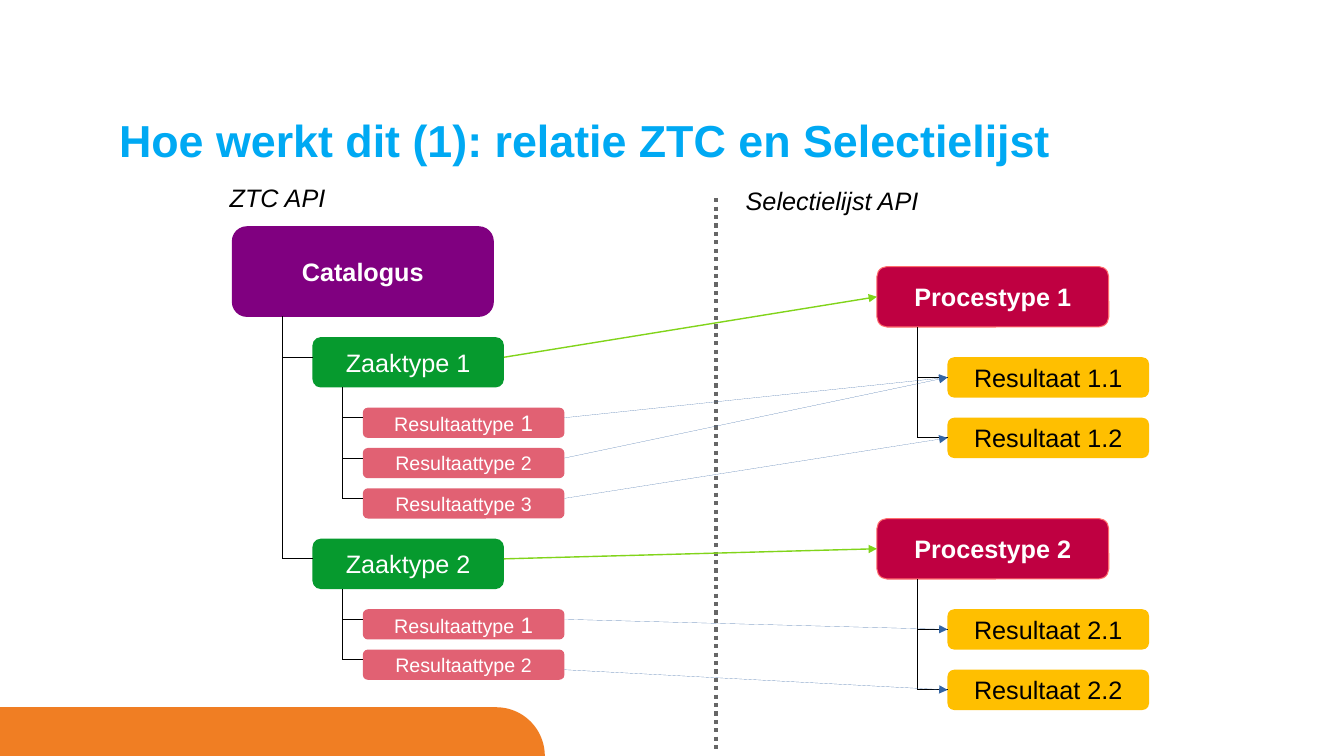
from math import cos, pi, sin

from pptx import Presentation
from pptx.dml.color import RGBColor
from pptx.enum.dml import MSO_LINE
from pptx.enum.shapes import MSO_CONNECTOR, MSO_SHAPE
from pptx.enum.text import MSO_ANCHOR as ANCHOR, MSO_AUTO_SIZE as AUTO, PP_ALIGN as ALIGN
from pptx.oxml.ns import qn
from pptx.util import Pt
from lxml.etree import SubElement

# Content
TITLE = "Hoe werkt dit (1): relatie ZTC en Selectielijst"
CAPTIONS = [  # text, left, top, width
    ("ZTC API", 157, 126.7, 95),
    ("Selectielijst API", 525.6, 128.9, 230.4),
]
CATALOGUS = "Catalogus"
ZAAKTYPES = [
    ("Zaaktype 1", ["Resultaattype 1", "Resultaattype 2", "Resultaattype 3"]),
    ("Zaaktype 2", ["Resultaattype 1", "Resultaattype 2"]),
]
PROCESTYPES = [
    ("Procestype 1", ["Resultaat 1.1", "Resultaat 1.2"]),
    ("Procestype 2", ["Resultaat 2.1", "Resultaat 2.2"]),
]
# (zaaktype, resultaattype) to (procestype, resultaat), extra drop at the start
RESULT_LINKS = [
    ((0, 0), (0, 0), 0),
    ((0, 1), (0, 0), 0),
    ((0, 2), (0, 1), 0),
    ((1, 0), (1, 0), 0),
    ((1, 1), (1, 1), 7.2),
]

COLORS = {
    "title": "00A9F3", "bar": "F07E23", "white": "FFFFFF", "black": "000000",
    "purple": "800080", "green": "069A2E", "pink": "E16173", "red": "BF0041",
    "red_edge": "FF6D6D", "yellow": "FFBF00", "divider": "666666",
    "type_link": "81D41A", "result_link": "3465A4",
}

# left, width, height, port (drop from top to where lines attach), trunk offset,
# fill, edge, text colour, size, bold
KINDS = {
    "catalogus": (165.6, 187.2, 64.8, 0, 36, "purple", None, "white", 18, True),
    "zaaktype": (223.2, 136.8, 36, 14.4, 21.6, "green", None, "white", 18, False),
    "resultaattype": (259.2, 144, 21.6, 7.2, 0, "pink", None, "white", 14, False),
    "procestype": (626.4, 165.6, 43.2, 21.6, 28.8, "red", "red_edge", "white", 18, True),
    "resultaat": (676.8, 144, 28.8, 14.4, 0, "yellow", None, "black", 18, False),
}
CATALOGUS_TOP = 161.6

prs = Presentation()
prs.slide_width, prs.slide_height = Pt(960), Pt(540)
s = prs.slides.add_slide(prs.slide_layouts[5])


def rgb(name):
    return RGBColor.from_string(COLORS[name])


def set_font(font, size, color, bold=False, italic=False):
    font.name, font.size = "Arial", Pt(size)
    font.bold, font.italic = bold, italic
    font.color.rgb = rgb(color)


def add_line(x1, y1, x2, y2, color="black", width=None, arrow=False, dash=None):
    cx = s.shapes.add_connector(MSO_CONNECTOR.STRAIGHT, Pt(x1), Pt(y1), Pt(x2), Pt(y2))
    el = cx._element
    el.remove(el.find(qn("p:style")))  # without a width this gives a hairline
    cx.line.color.rgb = rgb(color)
    if width:
        cx.line.width = Pt(width)
    if dash:
        cx.line.dash_style = dash
    if arrow:
        SubElement(cx.line._get_or_add_ln(), qn("a:tailEnd"), type="triangle")
    SubElement(el.spPr, qn("a:effectLst"))


def add_box(kind, text, top):
    """Draw a box; return its kind and top so that lines can find it."""
    left, width, height, _, _, fill, edge, color, size, bold = KINDS[kind]
    sp = s.shapes.add_shape(MSO_SHAPE.ROUNDED_RECTANGLE, Pt(left), Pt(top), Pt(width), Pt(height))
    sp.shadow.inherit = False
    sp.fill.solid()
    sp.fill.fore_color.rgb = rgb(fill)
    if edge:
        sp.line.color.rgb = rgb(edge)
        sp.line.width = Pt(0.75)
    else:
        sp.line.fill.background()
    tf = sp.text_frame
    tf.word_wrap = False
    tf.vertical_anchor = ANCHOR.MIDDLE
    p = tf.paragraphs[0]
    p.alignment = ALIGN.CENTER
    set_font(p.font, size, color, bold)
    if text == "Resultaattype 1":  # its number is set larger
        p.add_run().text = text[:-2]
        r = p.add_run()
        r.text = text[-2:]
        r.font.size = Pt(16)
    else:
        p.add_run().text = text
    return kind, top


def port(box, side):
    kind, top = box
    left, width, _, drop = KINDS[kind][:4]
    return left + (width if side == "right" else 0), top + drop


def add_tree(parent, children):
    """Join a parent to its children with a trunk and one branch each."""
    kind, top = parent
    left, _, height, _, offset = KINDS[kind][:5]
    trunk = left + offset
    ends = [port(child, "left") for child in children]
    add_line(trunk, top + height, trunk, ends[-1][1])
    for x, y in ends:
        add_line(trunk, y, x, y)


def add_groups(groups, kind, child_kind, top, pitch, first, step):
    """Draw parents at an equal pitch, each with its children below."""
    parents, families = [], []
    for i, (text, names) in enumerate(groups):
        y = top + i * pitch
        parents.append(add_box(kind, text, y))
        families.append([add_box(child_kind, name, y + first + j * step)
                         for j, name in enumerate(names)])
        add_tree(parents[-1], families[-1])
    return parents, families


# Orange bar with one round corner
RADIUS, BAR_RIGHT, BOTTOM = 34.8, 389.2, 540
corner = [(BAR_RIGHT - RADIUS + RADIUS * sin(a), BOTTOM - RADIUS * cos(a))
          for a in (pi / 2 * k / 24 for k in range(25))]
builder = s.shapes.build_freeform(0, Pt(BOTTOM))
builder.add_line_segments([(0, Pt(BOTTOM - RADIUS))] + [(Pt(x), Pt(y)) for x, y in corner])
bar = builder.convert_to_shape()
bar.shadow.inherit = False
bar.fill.solid()
bar.fill.fore_color.rgb = rgb("bar")
bar.line.fill.background()

# Title
title = s.shapes.title
title.left, title.top, title.width, title.height = Pt(85), Pt(85), Pt(790), Pt(57)
tf = title.text_frame
tf.text = TITLE
tf.word_wrap, tf.auto_size, tf.vertical_anchor = True, AUTO.NONE, ANCHOR.TOP
tf.margin_left = tf.margin_top = tf.margin_right = tf.margin_bottom = 0
p = tf.paragraphs[0]
p.alignment, p.line_spacing = ALIGN.LEFT, 0.9
set_font(p.font, 32, "title", bold=True)

# Both trees
catalogus = add_box("catalogus", CATALOGUS, CATALOGUS_TOP)
zaaktypes, resultaattypes = add_groups(
    ZAAKTYPES, "zaaktype", "resultaattype", CATALOGUS_TOP + 79.2, 144, 50.4, 28.8)
add_tree(catalogus, zaaktypes)
procestypes, resultaten = add_groups(
    PROCESTYPES, "procestype", "resultaat", CATALOGUS_TOP + 28.8, 180, 64.8, 43.2)

# Divider and links across it
add_line(511.2, 141.6, 511.2, 535.6, "divider", 3, dash=MSO_LINE.ROUND_DOT)
for zaaktype, procestype in zip(zaaktypes, procestypes):
    add_line(*port(zaaktype, "right"), *port(procestype, "left"), "type_link", 1, arrow=True)
for (i, j), (m, n), drop in RESULT_LINKS:
    x, y = port(resultaattypes[i][j], "right")
    add_line(x, y + drop, *port(resultaten[m][n], "left"), "result_link", arrow=True)

# Captions
for text, left, top, width in CAPTIONS:
    tf = s.shapes.add_textbox(Pt(left), Pt(top), Pt(width), Pt(28.8)).text_frame
    tf.text = text
    tf.word_wrap, tf.auto_size = True, AUTO.SHAPE_TO_FIT_TEXT
    set_font(tf.paragraphs[0].font, 18, "black", italic=True)

prs.save("out.pptx")
